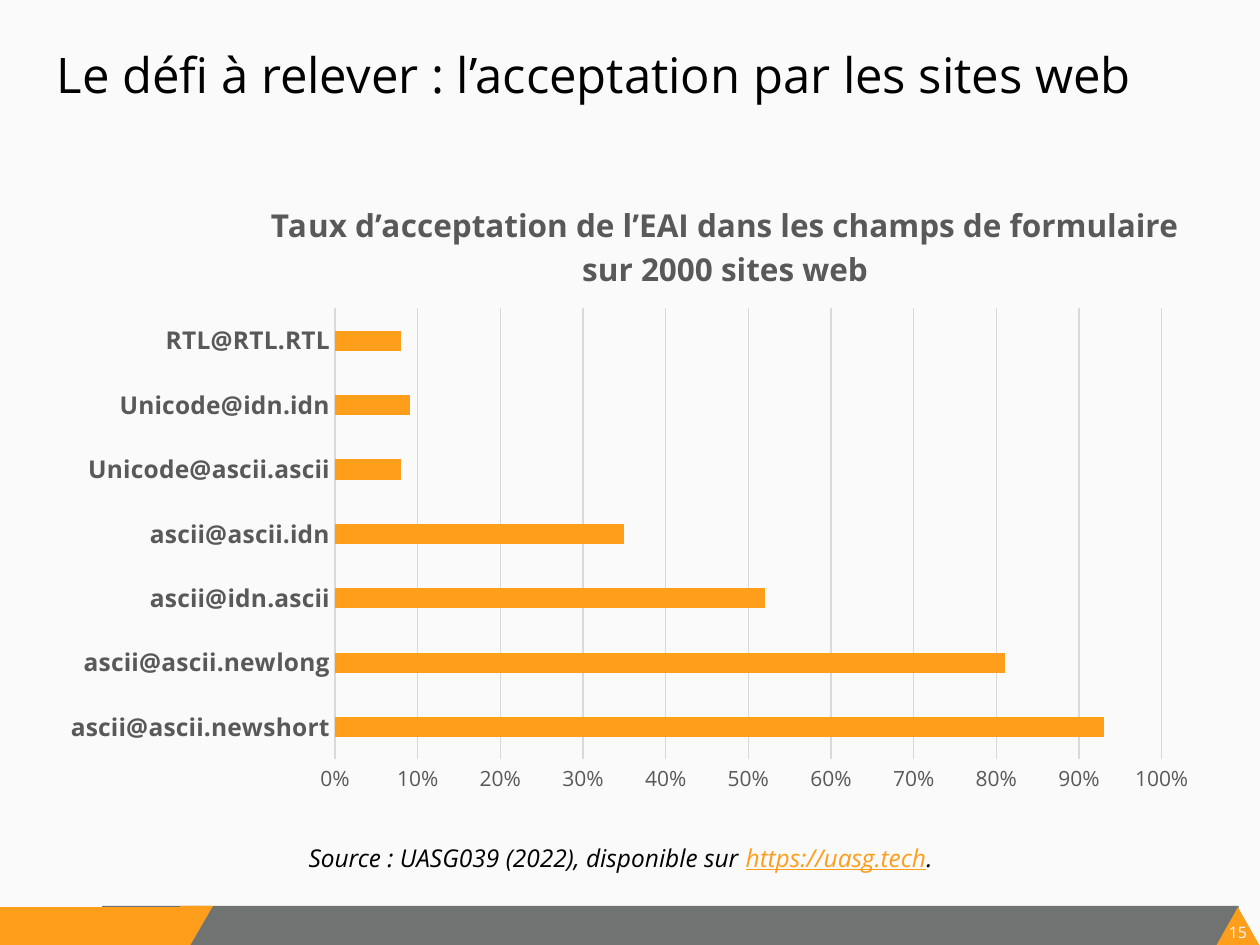
from lxml.etree import SubElement
from pptx import Presentation
from pptx.chart.data import CategoryChartData
from pptx.dml.color import RGBColor
from pptx.enum.chart import XL_CHART_TYPE, XL_TICK_MARK
from pptx.enum.shapes import MSO_SHAPE
from pptx.enum.text import MSO_ANCHOR, PP_ALIGN
from pptx.oxml.ns import qn
from pptx.util import Inches, Pt

# Content
TITLE = "Le défi à relever : l’acceptation par les sites web"
CHART_TITLE = "Taux d’acceptation de l’EAI dans les champs de formulaire sur 2000 sites web"
ACCEPTANCE = [
    ("ascii@ascii.newshort", 0.93),
    ("ascii@ascii.newlong", 0.81),
    ("ascii@idn.ascii", 0.52),
    ("ascii@ascii.idn", 0.35),
    ("Unicode@ascii.ascii", 0.08),
    ("Unicode@idn.idn", 0.09),
    ("RTL@RTL.RTL", 0.08),
]
SOURCE = [
    ("Source : UASG039 (2022), disponible sur ", {}),
    ("https://uasg.tech", {"color": "orange", "underline": True}),
    (".", {}),
]
PAGE_NUMBER = "15"

THEME = {
    "font": "Open Sans",
    "colors": {"paper": "FAFAFA", "black": "000000", "orange": "FF9E1B",
               "band": "707372", "label": "595959", "grid": "D9D9D9"},
    "sizes": {"title": 28, "chart_title": 18, "category": 14, "value": 12,
              "source": 14, "page": 9},
}

# Footer parts: shape, box, colour, rotation, adjustment
FOOTER = [
    (MSO_SHAPE.RECTANGLE, (0.81, 7.19, 9.02, 0.31), "band", 0, None),
    (MSO_SHAPE.RECTANGLE, (0, 7.2, 1.5, 0.31), "orange", 0, None),
    (MSO_SHAPE.ISOSCELES_TRIANGLE, (9.65, 7.2, 0.35, 0.31), "orange", 0, 0.5),
    (MSO_SHAPE.PARALLELOGRAM, (1.34, 7.19, 0.35, 0.31), "orange", 180, 0.58),
    (MSO_SHAPE.RECTANGLE, (1.43, 7.19, 0.14, 0.13), "orange", 0, None),
]


def rgb(name):
    return RGBColor.from_string(THEME["colors"][name])


def box(values):
    return [Inches(value) for value in values]


def style_font(font, size, color="black", bold=False, italic=False, underline=False):
    font.name = THEME["font"]
    font.size = Pt(THEME["sizes"][size])
    font.color.rgb = rgb(color)
    font.bold, font.italic, font.underline = bold, italic, underline


def add_text(paragraph, text, **style):
    run = paragraph.add_run()
    run.text = text
    style_font(run.font, **style)


def add_text_box(slide, position, margin=None):
    frame = slide.shapes.add_textbox(*box(position)).text_frame
    frame.word_wrap = True
    if margin is not None:
        frame.margin_left = frame.margin_right = Inches(margin)
        frame.margin_top = frame.margin_bottom = Inches(margin)
    return frame.paragraphs[0]


def place(parent, index, **fractions):
    """Set a manual layout, in fractions of the chart area."""
    for old in parent.findall(qn("c:layout")):
        parent.remove(old)
    layout = SubElement(parent, qn("c:layout"))
    parent.insert(index, layout)
    manual = SubElement(layout, qn("c:manualLayout"))
    if "w" in fractions:
        SubElement(manual, qn("c:layoutTarget")).set("val", "inner")
    for mode in ("xMode", "yMode"):
        SubElement(manual, qn(f"c:{mode}")).set("val", "edge")
    for key, value in fractions.items():
        SubElement(manual, qn(f"c:{key}")).set("val", str(value))


def add_footer(slide):
    for kind, position, color, rotation, adjustment in FOOTER:
        shape = slide.shapes.add_shape(kind, *box(position))
        shape.shadow.inherit = False
        shape.fill.solid()
        shape.fill.fore_color.rgb = rgb(color)
        shape.line.fill.background()
        shape.rotation = rotation
        if adjustment is not None:
            shape.adjustments[0] = adjustment
    paragraph = add_text_box(slide, (9.74, 7.32, 0.17, 0.15), margin=0)
    paragraph.alignment = PP_ALIGN.CENTER
    add_text(paragraph, PAGE_NUMBER, size="page", color="paper")


def add_acceptance_chart(slide):
    data = CategoryChartData(number_format="0%")
    data.categories = [name for name, _ in ACCEPTANCE]
    data.add_series("Series 1", [rate for _, rate in ACCEPTANCE])
    chart = slide.shapes.add_chart(
        XL_CHART_TYPE.BAR_CLUSTERED, *box((0.35, 1.39, 9.24, 5.04)), data).chart
    chart.has_legend = False
    chart.font.name = THEME["font"]

    # Chart title
    chart.has_title = True
    paragraph = chart.chart_title.text_frame.paragraphs[0]
    paragraph.alignment = PP_ALIGN.CENTER
    add_text(paragraph, CHART_TITLE, size="chart_title", color="label", bold=True)
    place(chart.chart_title._element, 1, x=0.19, y=0.03)
    place(chart._chartSpace.chart.plotArea, 0, x=0.25, y=0.21, w=0.71, h=0.71)

    # Bars
    plot = chart.plots[0]
    plot.gap_width = 219
    plot.vary_by_categories = False
    fill = plot.series[0].format.fill
    fill.solid()
    fill.fore_color.rgb = rgb("orange")

    # Axes
    categories, values = chart.category_axis, chart.value_axis
    for axis in (categories, values):
        axis.major_tick_mark = axis.minor_tick_mark = XL_TICK_MARK.NONE
    style_font(categories.tick_labels.font, "category", "label", bold=True)
    style_font(values.tick_labels.font, "value", "label")
    values.minimum_scale, values.maximum_scale, values.major_unit = 0, 1, 0.1
    values.tick_labels.number_format = "0%"
    values.tick_labels.number_format_is_linked = False
    values.format.line.fill.background()
    values.has_major_gridlines = True
    for line in (categories.format.line, values.major_gridlines.format.line):
        line.color.rgb = rgb("grid")
        line.width = Pt(0.75)


def main():
    presentation = Presentation()
    presentation.slide_width, presentation.slide_height = Inches(10), Inches(7.5)
    slide = presentation.slides.add_slide(presentation.slide_layouts[5])
    slide.background.fill.solid()
    slide.background.fill.fore_color.rgb = rgb("paper")

    add_footer(slide)

    # Title
    title = slide.shapes.title
    title.left, title.top, title.width, title.height = box((0.35, 0.3, 9.24, 1.25))
    title.text_frame.vertical_anchor = MSO_ANCHOR.TOP
    title.text_frame.word_wrap = True
    paragraph = title.text_frame.paragraphs[0]
    paragraph.alignment = PP_ALIGN.LEFT
    add_text(paragraph, TITLE, size="title")

    add_acceptance_chart(slide)

    # Source line
    paragraph = add_text_box(slide, (2.35, 6.64, 7.35, 0.34))
    for text, style in SOURCE:
        add_text(paragraph, text, size="source", italic=True, **style)

    presentation.save("out.pptx")


if __name__ == "__main__":
    main()
